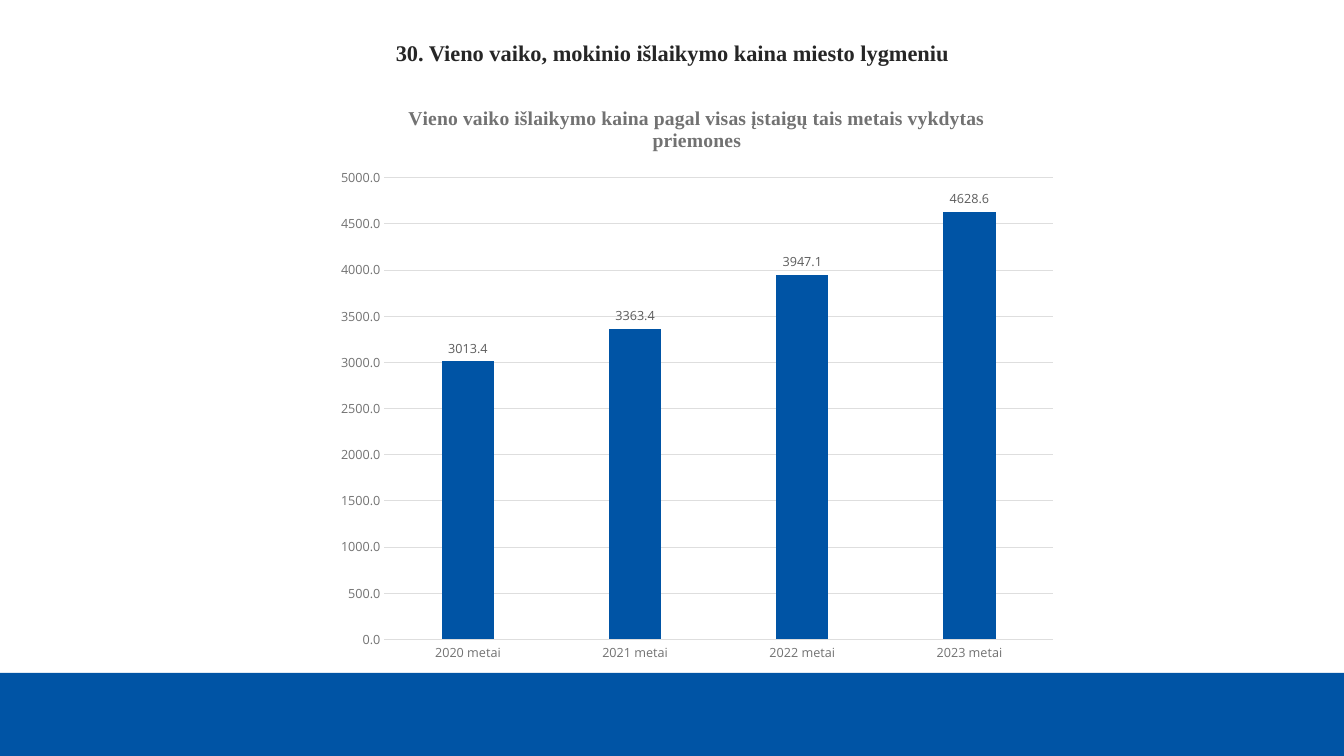
from dataclasses import dataclass

from lxml import etree
from pptx import Presentation
from pptx import util as u
from pptx.chart import data as chart_data
from pptx.dml import color
from pptx.enum import chart as ch, shapes, text
from pptx.oxml import ns


@dataclass(frozen=True)
class Theme:
    blue: str = "0054A5"
    ink: str = "262626"
    axis_grey: str = "727272"
    label_grey: str = "5C5C5C"
    grid_grey: str = "DEDEDE"
    serif: str = "Times New Roman"
    sans: str = "Open Sans"
    heading: float = 16
    chart_heading: float = 14
    chart_base: float = 10
    small: float = 9
    hairline: float = 0.75


def assign(target, values):
    for name, value in values.items():
        setattr(target, name, value)


class SlideBuilder:
    """Places elements by shares of the slide's width and height."""

    def __init__(self, deck, theme):
        self.deck, self.theme = deck, theme
        self.slide = deck.slides.add_slide(deck.slide_layouts[5])

    def frame(self, left, top, width, height):
        across, down = self.deck.slide_width, self.deck.slide_height
        return {"left": int(left * across), "top": int(top * down),
                "width": int(width * across), "height": int(height * down)}

    def style_font(self, font, name, size, rgb, bold=False):
        assign(font, {"name": name, "size": u.Pt(size), "bold": bold})
        font.color.rgb = color.RGBColor.from_string(rgb)

    def style_line(self, line):
        line.color.rgb = color.RGBColor.from_string(self.theme.grid_grey)
        line.width = u.Pt(self.theme.hairline)

    def title(self, wording, *area):
        heading = self.slide.shapes.title
        assign(heading, self.frame(*area))
        assign(heading.text_frame, {
            "text": wording, "word_wrap": True,
            "vertical_anchor": text.MSO_ANCHOR.TOP,
            "auto_size": text.MSO_AUTO_SIZE.NONE})
        paragraph = heading.text_frame.paragraphs[0]
        assign(paragraph, {"alignment": text.PP_ALIGN.LEFT, "line_spacing": 1.0})
        theme = self.theme
        self.style_font(paragraph.runs[0].font, theme.serif, theme.heading, theme.ink, True)

    def band(self, *area):
        footer = self.slide.shapes.add_shape(
            shapes.MSO_SHAPE.RECTANGLE, **dict(zip(
                ("left", "top", "width", "height"), self.frame(*area).values())))
        footer.shadow.inherit = False
        footer.fill.solid()
        footer.fill.fore_color.rgb = color.RGBColor.from_string(self.theme.blue)
        footer.line.fill.background()

    def column_chart(self, heading, costs, top_value, step, plot_area, *area):
        theme = self.theme
        yearly = chart_data.CategoryChartData(number_format="0.0")
        yearly.categories = list(costs)
        yearly.add_series(heading, list(costs.values()))
        place = self.frame(*area)
        chart = self.slide.shapes.add_chart(
            ch.XL_CHART_TYPE.COLUMN_CLUSTERED, place["left"], place["top"],
            place["width"], place["height"], yearly).chart
        assign(chart, {"has_legend": False, "has_title": True})
        self.style_font(chart.font, theme.sans, theme.chart_base, theme.ink)

        # Chart heading
        caption = chart.chart_title
        caption.include_in_layout = False
        caption.text_frame.text = heading
        self.style_font(caption.text_frame.paragraphs[0].runs[0].font,
                        theme.serif, theme.chart_heading, theme.axis_grey, True)

        # Axes and grid
        years, euros = chart.category_axis, chart.value_axis
        for axis in (years, euros):
            assign(axis, {"major_tick_mark": ch.XL_TICK_MARK.NONE,
                          "minor_tick_mark": ch.XL_TICK_MARK.NONE})
            self.style_font(axis.tick_labels.font, theme.sans, theme.small, theme.axis_grey)
        assign(euros, {"minimum_scale": 0, "maximum_scale": top_value,
                       "major_unit": step, "has_major_gridlines": True})
        assign(euros.tick_labels, {"number_format": "0.0", "number_format_is_linked": False})
        self.style_line(years.format.line)
        self.style_line(euros.major_gridlines.format.line)
        euros.format.line.fill.background()

        # Columns and their values
        plot = chart.plots[0]
        assign(plot, {"gap_width": 219, "overlap": -27,
                      "vary_by_categories": False, "has_data_labels": True})
        columns = plot.series[0].format.fill
        columns.solid()
        columns.fore_color.rgb = color.RGBColor.from_string(theme.blue)
        assign(plot.data_labels, {
            "show_value": True, "number_format": "0.0", "number_format_is_linked": False,
            "position": ch.XL_LABEL_POSITION.OUTSIDE_END})
        self.style_font(plot.data_labels.font, theme.sans, theme.small, theme.label_grey)
        self.fix_plot_area(chart, plot_area)

    def fix_plot_area(self, chart, plot_area):
        area = chart._chartSpace.chart.plotArea
        for old in area.findall(ns.qn("c:layout")):
            area.remove(old)
        layout = etree.Element(ns.qn("c:layout"))
        manual = etree.SubElement(layout, ns.qn("c:manualLayout"))
        settings = {"layoutTarget": "inner", "xMode": "edge", "yMode": "edge",
                    **dict(zip("xywh", plot_area))}
        for tag, value in settings.items():
            etree.SubElement(manual, ns.qn(f"c:{tag}")).set("val", str(value))
        area.insert(0, layout)


def main():
    deck = Presentation()
    assign(deck, {"slide_width": u.Inches(13.33), "slide_height": u.Inches(7.5)})
    page = SlideBuilder(deck, Theme())

    # Footer band
    page.band(0, 0.89, 1, 0.11)

    # Slide title
    page.title("30. Vieno vaiko, mokinio išlaikymo kaina miesto lygmeniu",
               0.287, 0.045, 0.614, 0.085)

    # Cost per child by year
    page.column_chart(
        "Vieno vaiko išlaikymo kaina pagal visas įstaigų tais metais vykdytas priemones",
        {"2020 metai": 3013.4, "2021 metai": 3363.4,
         "2022 metai": 3947.1, "2023 metai": 4628.6},
        5000, 500, (0.078, 0.158, 0.903, 0.783),
        0.243, 0.112, 0.551, 0.78)

    deck.save("out.pptx")


if __name__ == "__main__":
    main()
